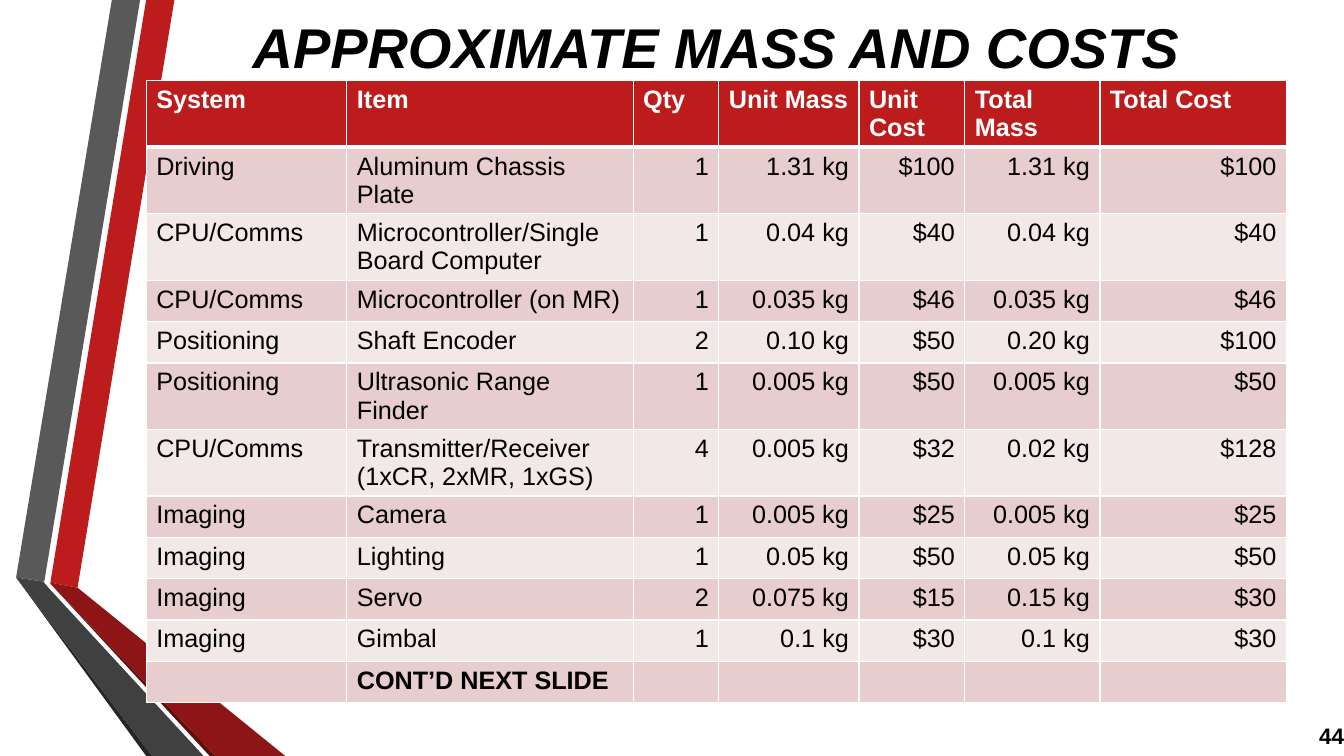
from lxml import etree
from pptx import Presentation
from pptx.dml.color import RGBColor
from pptx.enum.text import MSO_ANCHOR, PP_ALIGN
from pptx.oxml.ns import qn
from pptx.util import Inches, Pt

WHITE = RGBColor(0xFF, 0xFF, 0xFF)
BLACK = RGBColor(0, 0, 0)
RED = RGBColor(0xBC, 0x1C, 0x1C)
DARK_RED = RGBColor(0x8D, 0x15, 0x15)
DEEP_RED = RGBColor(0x5E, 0x0E, 0x0E)
GRAY = RGBColor(0x59, 0x59, 0x59)
DARK_GRAY = RGBColor(0x40, 0x40, 0x40)
DEEP_GRAY = RGBColor(0x26, 0x26, 0x26)
BANDS = (RGBColor(0xE7, 0xCD, 0xCD), RGBColor(0xF3, 0xE8, 0xE8))
FONT = "Arial"

# Content
TITLE = "APPROXIMATE MASS AND COSTS"
PAGE_NUMBER = "44"
CONTINUED = "CONT’D NEXT SLIDE"
ROWS = [
    ("System", "Item", "Qty", "Unit Mass", "Unit Cost", "Total Mass", "Total Cost"),
    ("Driving", "Aluminum Chassis Plate", "1", "1.31 kg", "$100", "1.31 kg", "$100"),
    ("CPU/Comms", "Microcontroller/Single Board Computer", "1", "0.04 kg", "$40", "0.04 kg", "$40"),
    ("CPU/Comms", "Microcontroller (on MR)", "1", "0.035 kg", "$46", "0.035 kg", "$46"),
    ("Positioning", "Shaft Encoder", "2", "0.10 kg", "$50", "0.20 kg", "$100"),
    ("Positioning", "Ultrasonic Range Finder", "1", "0.005 kg", "$50", "0.005 kg", "$50"),
    ("CPU/Comms", "Transmitter/Receiver (1xCR, 2xMR, 1xGS)", "4", "0.005 kg", "$32", "0.02 kg", "$128"),
    ("Imaging", "Camera", "1", "0.005 kg", "$25", "0.005 kg", "$25"),
    ("Imaging", "Lighting", "1", "0.05 kg", "$50", "0.05 kg", "$50"),
    ("Imaging", "Servo", "2", "0.075 kg", "$15", "0.15 kg", "$30"),
    ("Imaging", "Gimbal", "1", "0.1 kg", "$30", "0.1 kg", "$30"),
    ("", CONTINUED, "", "", "", "", ""),
]
COLUMN_WIDTHS = (1.99, 2.84, 0.85, 1.39, 1.05, 1.34, 1.85)
TWO_LINE_ROWS = {0, 1, 2, 5, 6}
ROW_HEIGHT, TWO_LINE_HEIGHT = 0.41, 0.66

# Side ribbon: colour and corner points in inches
RIBBON = [
    (RED, [(0.5, 5.78), (0.77, 5.83), (1.73, 0), (1.45, 0)]),
    (GRAY, [(1.39, 0), (1.11, 0), (0.16, 5.73), (0.44, 5.77)]),
    (DEEP_GRAY, [(0.16, 5.73), (1.45, 7.5), (1.51, 7.5)]),
    (DEEP_RED, [(0.5, 5.79), (2.08, 7.5), (2.14, 7.5)]),
    (DARK_RED, [(0.5, 5.78), (0.5, 5.79), (2.14, 7.5), (2.83, 7.5), (0.77, 5.83)]),
    (DARK_GRAY, [(2.02, 7.5), (0.48, 5.83), (0.43, 5.77), (0.16, 5.73), (1.51, 7.5)]),
]


def place(shape, left, top, width, height):
    shape.left, shape.top = Inches(left), Inches(top)
    shape.width, shape.height = Inches(width), Inches(height)


def write(frame, text, size, color, align, bold=False, italic=False):
    paragraph = frame.paragraphs[0]
    paragraph.alignment = align
    run = paragraph.add_run()
    run.text = text
    font = run.font
    font.name, font.size, font.bold, font.italic = FONT, Pt(size), bold, italic
    font.color.rgb = color


def set_borders(cell, bottom_width):
    properties = cell._tc.get_or_add_tcPr()
    widths = {"a:lnL": 1, "a:lnR": 1, "a:lnT": 1, "a:lnB": bottom_width}
    for index, (tag, width) in enumerate(widths.items()):
        line = etree.Element(qn(tag), w=str(Pt(width)))
        fill = etree.SubElement(line, qn("a:solidFill"))
        etree.SubElement(fill, qn("a:srgbClr"), val=str(WHITE))
        properties.insert(index, line)


presentation = Presentation()
presentation.slide_width, presentation.slide_height = Inches(13.33), Inches(7.5)
slide = presentation.slides.add_slide(presentation.slide_layouts[5])

# Ribbon
for color, points in RIBBON:
    corners = [(Inches(x), Inches(y)) for x, y in points]
    builder = slide.shapes.build_freeform(*corners[0])
    builder.add_line_segments(corners[1:], close=True)
    band = builder.convert_to_shape()
    band.shadow.inherit = False
    band.fill.solid()
    band.fill.fore_color.rgb = color
    band.line.fill.background()

# Title
title = slide.shapes.title
place(title, 1.62, 0.02, 10.96, 0.88)
title.text_frame.vertical_anchor = MSO_ANCHOR.MIDDLE
write(title.text_frame, TITLE, 40, BLACK, PP_ALIGN.CENTER, bold=True, italic=True)

# Table
heights = [TWO_LINE_HEIGHT if i in TWO_LINE_ROWS else ROW_HEIGHT for i in range(len(ROWS))]
table = slide.shapes.add_table(
    len(ROWS), len(COLUMN_WIDTHS), Inches(1.45), Inches(0.8),
    Inches(sum(COLUMN_WIDTHS)), Inches(sum(heights))).table
for column, width in zip(table.columns, COLUMN_WIDTHS):
    column.width = Inches(width)
for row_index, values in enumerate(ROWS):
    table.rows[row_index].height = Inches(heights[row_index])
    header = row_index == 0
    for column_index, value in enumerate(values):
        cell = table.cell(row_index, column_index)
        cell.fill.solid()
        cell.fill.fore_color.rgb = RED if header else BANDS[(row_index - 1) % 2]
        set_borders(cell, 3 if header else 1)
        if value:
            numeric = not header and column_index >= 2
            write(cell.text_frame, value, 18, WHITE if header else BLACK,
                  PP_ALIGN.RIGHT if numeric else PP_ALIGN.LEFT,
                  bold=header or value == CONTINUED)

# Page number
number = slide.shapes.add_textbox(Inches(12.73), Inches(7.1), Inches(0.6), Inches(0.4))
number.text_frame.word_wrap = True
number.text_frame.margin_right = 0
number.text_frame.vertical_anchor = MSO_ANCHOR.MIDDLE
write(number.text_frame, PAGE_NUMBER, 16, BLACK, PP_ALIGN.RIGHT, bold=True)

presentation.save("out.pptx")
